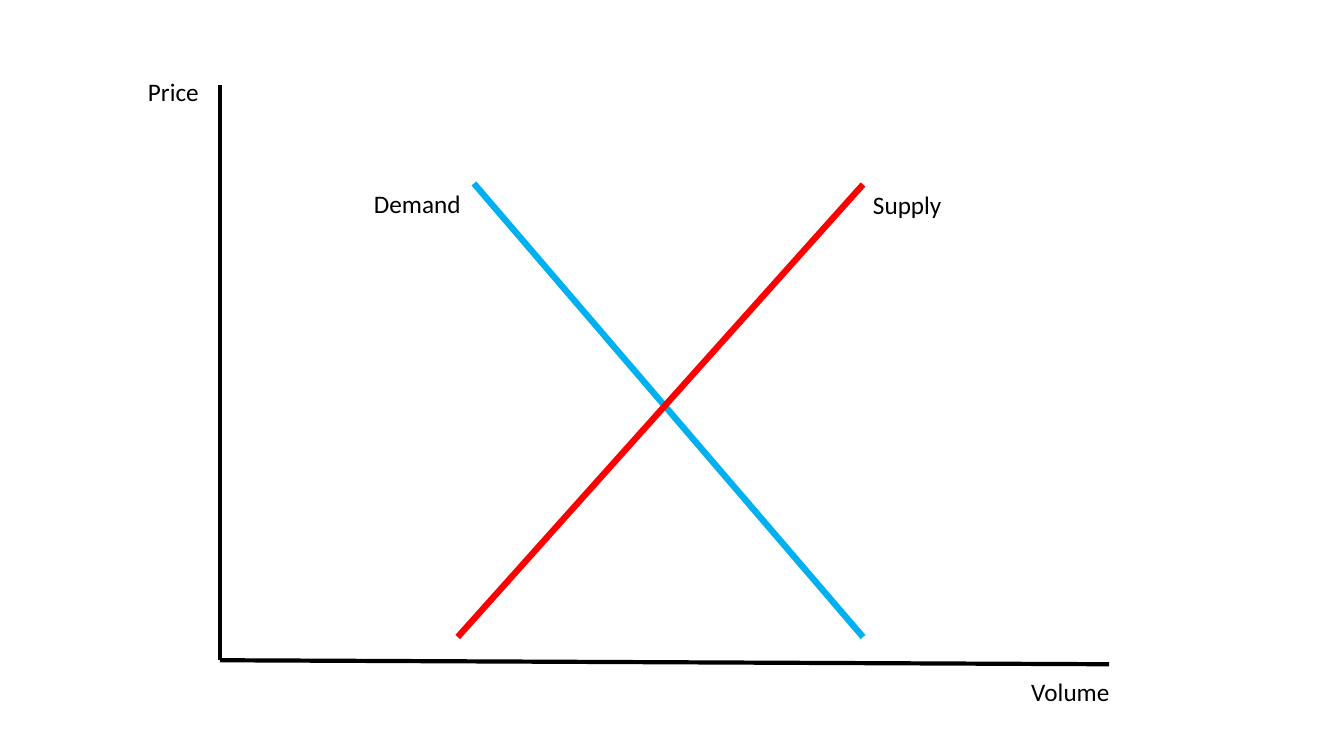
from dataclasses import dataclass

from pptx import Presentation
from pptx.dml.color import RGBColor
from pptx.enum.shapes import MSO_CONNECTOR
from pptx.enum.text import MSO_AUTO_SIZE, PP_ALIGN
from pptx.oxml.ns import qn
from pptx.util import Inches, Pt
from lxml.etree import SubElement


@dataclass(frozen=True)
class Theme:
    font: str = "Calibri"
    label_size: float = 18
    axis_width: float = 3
    curve_width: float = 4.5
    ink: str = "000000"
    demand: str = "00B0F0"
    supply: str = "FF0000"


@dataclass(frozen=True)
class Box:
    left: float
    top: float
    width: float
    height: float


THEME = Theme()
LABEL_HEIGHT = 0.4


def add_line(slide, box, start, end, color, width):
    """Draw a line between two points measured from the box's corner."""
    (x1, y1), (x2, y2) = start, end
    line = slide.shapes.add_connector(
        MSO_CONNECTOR.STRAIGHT,
        Inches(box.left + x1), Inches(box.top + y1),
        Inches(box.left + x2), Inches(box.top + y2),
    )
    line.line.color.rgb = RGBColor.from_string(color)
    line.line.width = Pt(width)
    SubElement(line._element.spPr, qn("a:effectLst"))


def add_label(slide, box, text, x, y, width, align=PP_ALIGN.LEFT):
    """Place a one-line label measured from the box's corner."""
    label = slide.shapes.add_textbox(
        Inches(box.left + x), Inches(box.top + y),
        Inches(width), Inches(LABEL_HEIGHT),
    )
    frame = label.text_frame
    frame.word_wrap = True
    frame.auto_size = MSO_AUTO_SIZE.SHAPE_TO_FIT_TEXT
    paragraph = frame.paragraphs[0]
    paragraph.alignment = align
    run = paragraph.add_run()
    run.text = text
    run.font.name = THEME.font
    run.font.size = Pt(THEME.label_size)
    run.font.color.rgb = RGBColor.from_string(THEME.ink)


def draw_axes(slide, box):
    origin = (0, box.height)
    # The volume axis dips slightly to the right
    for start, end in (((0, 0), origin), (origin, (box.width, box.height + 0.04))):
        add_line(slide, box, start, end, THEME.ink, THEME.axis_width)
    add_label(slide, box, "Price", -1.62, -0.13, 1.51, PP_ALIGN.RIGHT)
    add_label(slide, box, "Volume", box.width - 0.87, box.height + 0.11, 1.6)


def draw_curves(slide, box):
    # Demand falls to the right, with its label left of the line
    add_line(slide, box, (0.16, 0), (box.width, box.height),
             THEME.demand, THEME.curve_width)
    add_label(slide, box, "Demand", -0.93, 0, 1.88)
    # Supply rises to the right, with its label at the upper end
    add_label(slide, box, "Supply", box.width, 0.01, 1.49)
    add_line(slide, box, (box.width, 0.01), (0, box.height),
             THEME.supply, THEME.curve_width)


def main():
    presentation = Presentation()
    presentation.slide_width = Inches(13.33)
    presentation.slide_height = Inches(7.5)
    blank_layout = presentation.slide_layouts[6]
    slide = presentation.slides.add_slide(blank_layout)
    draw_axes(slide, Box(2.18, 0.84, 8.82, 5.71))
    draw_curves(slide, Box(4.54, 1.82, 4.02, 4.5))
    presentation.save("out.pptx")


if __name__ == "__main__":
    main()
